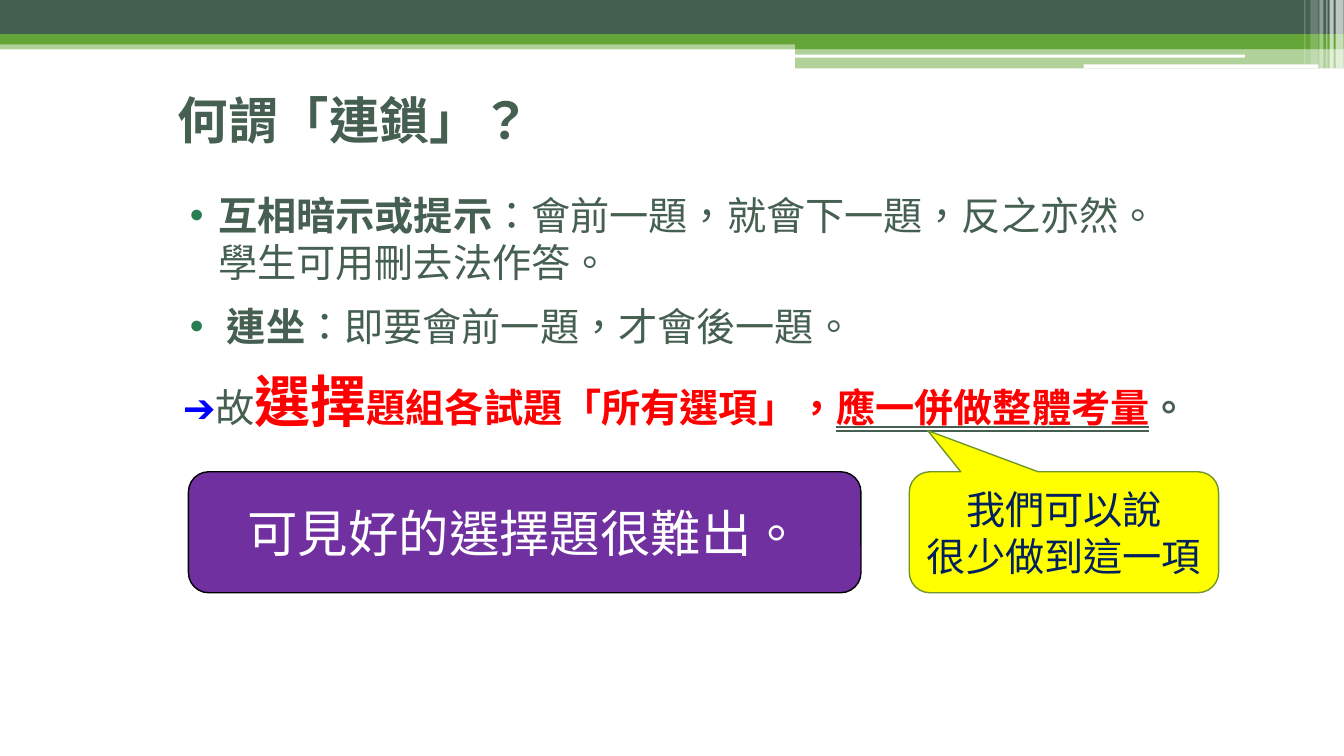
from lxml.etree import SubElement
from pptx import Presentation
from pptx.dml.color import RGBColor
from pptx.enum.shapes import MSO_SHAPE as Preset
from pptx.enum.text import MSO_ANCHOR as Anchor, MSO_UNDERLINE as Underline, PP_ALIGN as Align
from pptx.oxml import parse_xml
from pptx.oxml.ns import nsdecls, qn
from pptx.util import Pt


class Theme:
    dark, green, bullet = "455F51", "63A537", "297D53"
    white, black, red, blue = "FFFFFF", "000000", "FF0000", "0000FF"
    purple, yellow, olive, navy = "7030A0", "FFFF00", "719629", "002060"
    text_font, box_font = "Noto Sans CJK TC", "Noto Sans CJK SC"
    language = "zh-TW"
    body, title, emphasis = 28, 36, 40


WIDTH, HEIGHT = 960, 540

# Content: each run is text, colour, size, bold, underlined
TITLE = [("何謂「連鎖」？", Theme.dark, Theme.title, True, False)]
BULLETS = [
    [("互相暗示或提示", Theme.dark, Theme.body, True, False),
     ("：會前一題，就會下一題，反之亦然。學生可用刪去法作答。", Theme.dark, Theme.body, False, False)],
    [(" ", Theme.dark, Theme.body, False, False),
     ("連坐", Theme.dark, Theme.body, True, False),
     ("：即要會前一題，才會後一題。", Theme.dark, Theme.body, False, False)],
]
CONCLUSION = [
    ("➔", Theme.blue, Theme.body, False, False),
    ("故", Theme.dark, Theme.body, False, False),
    ("選擇", Theme.red, Theme.emphasis, True, False),
    ("題組各試題「所有選項」，", Theme.red, Theme.body, True, False),
    ("應一併做整體考量", Theme.red, Theme.body, True, True),
    ("。", Theme.dark, Theme.body, True, False),
]
CALLOUT = ["我們可以說", "很少做到這一項"]
VERDICT = ["可見好的選擇題很難出。"]

# Header bands: left, top, width, height, colour, opacity
SPLIT = 568
BANDS = [
    (0, 28.8, WIDTH, 6.5, Theme.green, 50),
    (0, 0, WIDTH, 24.5, Theme.dark, 100),
    (0, 24.5, WIDTH, 7.2, Theme.green, 100),
    (SPLIT, 28, WIDTH - SPLIT, 7, Theme.green, 100),
    (SPLIT, 34.7, WIDTH - SPLIT, 14.3, Theme.green, 50),
]
GAPS = [(567.5, 39, 321.8, 2.2), (774, 46, 167.8, 2.9)]
# Stripes at the right end: left, width, height, opacity
STRIPES = [(954, 5.8, 49, 65), (949.7, 2.9, 49, 65), (947.5, 0.7, 49, 60),
           (942.5, 2.9, 49, 40), (936, 5.8, 46, 20), (931.7, 0.7, 46, 30)]


def color(value):
    return RGBColor.from_string(value)


def add_shape(slide, preset, box, fill, opacity=100, line=None, adjustments=()):
    shape = slide.shapes.add_shape(preset, *map(Pt, box))
    shape.shadow.inherit = False
    shape.fill.solid()
    shape.fill.fore_color.rgb = color(fill)
    if opacity < 100:
        srgb = shape.fill._xPr.find(".//" + qn("a:srgbClr"))
        SubElement(srgb, qn("a:alpha"), val=str(opacity * 1000))
    if line:
        shape.line.color.rgb = color(line)
        shape.line.width = Pt(1)
    else:
        shape.line.fill.background()
    for index, value in enumerate(adjustments):
        shape.adjustments[index] = value
    return shape


def add_text_box(slide, box, anchor):
    frame = slide.shapes.add_textbox(*map(Pt, box)).text_frame
    frame.word_wrap = True
    frame.vertical_anchor = anchor
    return frame


def add_run(paragraph, text, ink, size, bold, underlined, font_name):
    run = paragraph.add_run()
    run.text = text
    font = run.font
    font.size, font.bold, font.name = Pt(size), bold, font_name
    font.color.rgb = color(ink)
    properties = run._r.get_or_add_rPr()
    properties.set("lang", Theme.language)
    SubElement(properties, qn("a:ea"), typeface=font_name)
    if underlined:
        font.underline = Underline.DOUBLE_LINE
        properties.find(qn("a:latin")).addprevious(parse_xml(
            f'<a:uFill {nsdecls("a")}><a:solidFill><a:srgbClr val="{Theme.dark}"/>'
            '</a:solidFill></a:uFill>'))


def set_indent(paragraph, margin, indent, bullet):
    properties = paragraph._p.get_or_add_pPr()
    properties.set("marL", str(Pt(margin)))
    properties.set("indent", str(Pt(indent)))
    if bullet:
        bullet_color = SubElement(properties, qn("a:buClr"))
        SubElement(bullet_color, qn("a:srgbClr"), val=Theme.bullet)
        SubElement(properties, qn("a:buFont"), typeface="Arial")
        SubElement(properties, qn("a:buChar"), char="•")


def add_label(shape, lines, size, ink):
    frame = shape.text_frame
    frame.word_wrap = False
    frame.vertical_anchor = Anchor.MIDDLE
    paragraph = frame.paragraphs[0]
    paragraph.alignment = Align.CENTER
    for index, text in enumerate(lines):
        if index:
            paragraph.add_line_break()
        add_run(paragraph, text, ink, size, False, False, Theme.box_font)


def main():
    presentation = Presentation()
    presentation.slide_width, presentation.slide_height = Pt(WIDTH), Pt(HEIGHT)
    slide = presentation.slides.add_slide(presentation.slide_layouts[6])

    # Header decoration
    for *box, fill, opacity in BANDS:
        add_shape(slide, Preset.RECTANGLE, box, fill, opacity)
    for box in GAPS:
        add_shape(slide, Preset.ROUNDED_RECTANGLE, box, Theme.white)
    for left, width, height, opacity in STRIPES:
        add_shape(slide, Preset.RECTANGLE, (left, 0, width, height), Theme.white, opacity)

    # Title
    title = add_text_box(slide, (120, 54, 791, 63), Anchor.MIDDLE)
    for run in TITLE:
        add_run(title.paragraphs[0], *run, Theme.text_font)

    # Body
    body = add_text_box(slide, (120, 133.2, 719.5, 397.5), Anchor.TOP)
    for index, runs in enumerate(BULLETS + [CONCLUSION]):
        paragraph = body.paragraphs[0] if index == 0 else body.add_paragraph()
        paragraph.space_before = Pt(12 if index else 0)
        if runs is CONCLUSION:
            set_indent(paragraph, 3.6, 0, False)
        else:
            set_indent(paragraph, 28.8, -20.2, True)
        for run in runs:
            add_run(paragraph, *run, Theme.text_font)

    # Boxes on one row
    top, height = 337, 86.4
    callout = add_shape(slide, Preset.ROUNDED_RECTANGULAR_CALLOUT, (649.5, top, 221, height),
                        Theme.yellow, line=Theme.olive, adjustments=(-0.44, -0.84, 0.17))
    add_label(callout, CALLOUT, Theme.body, Theme.navy)
    verdict = add_shape(slide, Preset.ROUNDED_RECTANGLE, (134.6, top, 480.4, height),
                        Theme.purple, line=Theme.black)
    add_label(verdict, VERDICT, Theme.title, Theme.white)

    presentation.save("out.pptx")


if __name__ == "__main__":
    main()
